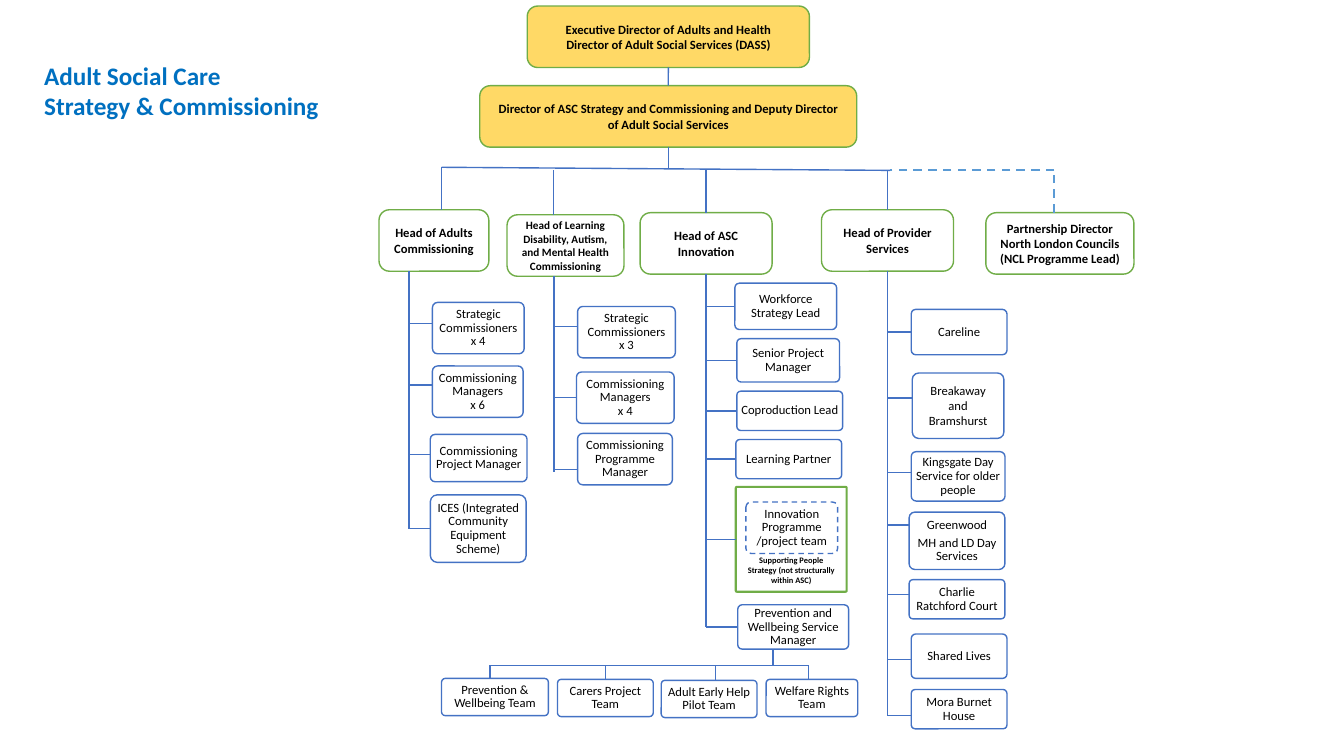
from dataclasses import dataclass

from lxml import etree
from pptx import Presentation
from pptx.dml.color import RGBColor
from pptx.enum.dml import MSO_LINE
from pptx.enum.shapes import MSO_CONNECTOR, MSO_SHAPE
from pptx.enum.text import MSO_ANCHOR, PP_ALIGN
from pptx.oxml.ns import qn
from pptx.util import Pt

ROUNDED = MSO_SHAPE.ROUNDED_RECTANGLE
STRAIGHT = MSO_CONNECTOR.STRAIGHT
DASH = MSO_LINE.DASH
MIDDLE, BOTTOM_ANCHOR = MSO_ANCHOR.MIDDLE, MSO_ANCHOR.BOTTOM
CENTER, LEFT_ALIGN = PP_ALIGN.CENTER, PP_ALIGN.LEFT
TOP, LEFT, BOTTOM = 0, 1, 2

FONT = "Calibri"
COLORS = {
    "gold": "FFD966", "green": "70AD47", "blue": "4472C4", "sky": "5B9BD5",
    "title": "0070C0", "white": "FFFFFF", "black": "000000",
}
SNAP = 2  # a line this near to the middle of a side is joined there
HEAD_HEIGHT = 43.9
BUS_LEFT, BUS_RIGHT = (315.4, 119.5), (635.8, 121.7)
TEAM_BUS_Y = 475.2


@dataclass
class BoxStyle:
    fill: str = "white"
    line: str = "blue"
    weight: float = 1
    dashed: bool = False
    corner: float = 0.1
    size: float = 9
    bold: bool = False
    spacing: float = 0.9
    gap: float = 3.15
    anchor: MSO_ANCHOR = MIDDLE
    insets: tuple = (2, 1)


HEAD = BoxStyle(line="green", corner=0.17, bold=True, spacing=1, gap=0, insets=(7.2, 3.6))
SMALL_HEAD = BoxStyle(line="green", corner=0.17, size=8, bold=True, spacing=1, insets=(7.2, 3.6))
DIRECTOR = BoxStyle(fill="gold", line="green", corner=0.17, bold=True, spacing=1, gap=0,
                    insets=(7.2, 3.6))
REPORT = BoxStyle()
LOOSE_REPORT = BoxStyle(spacing=1, gap=0)
PROJECT_TEAM = BoxStyle(dashed=True)
SUPPORTING = BoxStyle(line="green", weight=1.5, corner=0.01, size=6, bold=True, spacing=1,
                      anchor=BOTTOM_ANCHOR, insets=(7.2, 4.5))

# Each head: left, top, width, text, style, x of the line above, y where that line
# starts, x and end of the line below, and the reports.
# Each report: left, top, width, height, text, y of its line, style.
HEADS = [
    (270.7, 149.8, 78.5, "Head of Adults Commissioning", HEAD, 315.4, 119.5, 292.3, 377.6, [
        (308.9, 216, 65.5, 36.7, "Strategic Commissioners x 4", 231.1, REPORT),
        (308.9, 261.4, 64.8, 36.7, "Commissioning Managers\nx 6", 275, REPORT),
        (307.4, 310.3, 69.1, 33.8, "Commissioning Project Manager", 324.7, REPORT),
        (307.4, 353.5, 68.4, 48.2, "ICES (Integrated Community Equipment Scheme)", 378, REPORT),
    ]),
    (362.2, 153.4, 83.5, "Head of Learning Disability, Autism, and Mental Health Commissioning",
     SMALL_HEAD, 395.3, 121.7, 395.7, 337, [
        (412.6, 218.9, 69.8, 36.7, "Strategic Commissioners\nx 3", 233.3, REPORT),
        (411.8, 265.7, 69.8, 36.7, "Commissioning Managers\nx 4", 285.1, REPORT),
        (412.6, 309.6, 67.7, 36.7, "Commissioning Programme Manager", 335.5, REPORT),
    ]),
    (457.2, 151.9, 94.3, "Head of ASC Innovation", HEAD, 504.4, 121.7, 504.4, 447.8, [
        (524.9, 202.3, 72.7, 33.1, "Workforce Strategy Lead", 220.3, REPORT),
        (526.3, 241.9, 73.4, 31, "Senior Project Manager", 256.3, REPORT),
        (526.3, 279.4, 75.6, 28.1, "Coproduction Lead", 291.6, REPORT),
        (525.6, 313.9, 75.6, 28.1, "Learning Partner", 327.6, REPORT),
        (525.6, 347.8, 79.2, 74.9, "Supporting People Strategy (not structurally within ASC)",
         384.5, SUPPORTING),
        (527, 432, 79.2, 31.7, "Prevention and Wellbeing Service Manager", 447.1, REPORT),
    ]),
    (586.8, 149.8, 94.3, "Head of Provider Services", HEAD, 634, 121.7, 634, 511.2, [
        (650.9, 221, 68.4, 32.4, "Careline", 239, REPORT),
        (651.6, 266.4, 65.5, 46.8, ["Breakaway", "and", "Bramshurst"], 284.4, LOOSE_REPORT),
        (650.9, 322.6, 67, 35.3, "Kingsgate Day Service for older people", 337.7, REPORT),
        (649.4, 365.8, 68.4, 41, ["Greenwood", "MH and LD Day Services"], 375.1, REPORT),
        (649.4, 414, 68.4, 28.1, "Charlie Ratchford Court", 424.8, REPORT),
        (650.9, 452.9, 68.4, 31.7, "Shared Lives", 470.9, REPORT),
        (650.9, 492.5, 68.4, 28.1, "Mora Burnet House", 511.2, REPORT),
    ]),
]
# Each team: left, top, width, text, x of its line
TEAMS = [
    (315.4, 484.6, 76.3, "Prevention & Wellbeing Team", 349.9),
    (398.2, 485.3, 68.4, "Carers Project Team", 431.3),
    (472.3, 486, 68.4, "Adult Early Help Pilot Team", 511.2),
    (547.2, 485.3, 65.5, "Welfare Rights Team", 577.4),
]


def rgb(name):
    return RGBColor.from_string(COLORS[name])


def write(frame, text, size, color, bold, align, spacing=1, gap=0):
    """Fill a text frame; a list gives paragraphs, a newline gives a line break."""
    frame.word_wrap = True
    paragraphs = [text] if isinstance(text, str) else text
    for i, words in enumerate(paragraphs):
        paragraph = frame.add_paragraph() if i else frame.paragraphs[0]
        paragraph.alignment = align
        paragraph.line_spacing = spacing
        paragraph.space_before = Pt(gap if i else 0)
        for j, part in enumerate(words.split("\n")):
            if j:
                paragraph.add_line_break()
            run = paragraph.add_run()
            run.text = part
            run.font.name = FONT
            run.font.size = Pt(size)
            run.font.bold = bold
            run.font.color.rgb = rgb(color)


def add_box(slide, left, top, width, height, text, style):
    box = slide.shapes.add_shape(ROUNDED, Pt(left), Pt(top), Pt(width), Pt(height))
    box.shadow.inherit = False
    box.adjustments[0] = style.corner
    box.fill.solid()
    box.fill.fore_color.rgb = rgb(style.fill)
    box.line.color.rgb = rgb(style.line)
    box.line.width = Pt(style.weight)
    if style.dashed:
        box.line.dash_style = DASH
    frame = box.text_frame
    frame.vertical_anchor = style.anchor
    frame.margin_left = frame.margin_right = Pt(style.insets[0])
    frame.margin_top = frame.margin_bottom = Pt(style.insets[1])
    write(frame, text, style.size, "black", style.bold, CENTER, style.spacing, style.gap)
    return box


def add_line(slide, start, end, dashed=False):
    line = slide.shapes.add_connector(STRAIGHT, *(Pt(v) for v in (*start, *end)))
    line.line.color.rgb = rgb("sky" if dashed else "blue")
    line.line.width = Pt(1.5 if dashed else 1)
    if dashed:
        line.line.dash_style = DASH
    etree.SubElement(line._element.spPr, qn("a:effectLst"))
    return line


def add_branch(slide, box, side, at, reach, dashed=False):
    """Draw a line square to a side of the box, at one place along it, as far as reach."""
    if side == LEFT:
        middle = (box.top + box.height / 2) / Pt(1)
    else:
        middle = (box.left + box.width / 2) / Pt(1)
    joined = abs(at - middle) <= SNAP
    if joined:
        at = middle
    if side == LEFT:
        start, end = (box.left.pt, at), (reach, at)
    else:
        edge = box.top if side == TOP else box.top + box.height
        start, end = (at, edge / Pt(1)), (at, reach)
    line = add_line(slide, start, end, dashed)
    if joined:
        line.begin_connect(box, side)


def add_directors(slide):
    executive = add_box(slide, 376.6, 4.3, 201.6, HEAD_HEIGHT,
                        ["Executive Director of Adults and Health",
                         "Director of Adult Social Services (DASS)"], DIRECTOR)
    deputy = add_box(slide, 342.7, 61.2, 269.3, HEAD_HEIGHT,
                     "Director of ASC Strategy and Commissioning and Deputy Director "
                     "of Adult Social Services", DIRECTOR)
    link = add_line(slide, (477.4, 48.2), (477.4, 61.2))
    link.begin_connect(executive, BOTTOM)
    link.end_connect(deputy, TOP)
    add_branch(slide, deputy, BOTTOM, 478.8, 120.6)
    add_line(slide, BUS_LEFT, BUS_RIGHT)


def add_department(slide, left, top, width, text, style, drop_x, bus_y, trunk_x, trunk_end,
                   reports):
    """Draw a head with its reports and return the boxes of the reports."""
    head = add_box(slide, left, top, width, HEAD_HEIGHT, text, style)
    add_branch(slide, head, TOP, drop_x, bus_y)
    add_branch(slide, head, BOTTOM, trunk_x, trunk_end)
    boxes = []
    for *place, title, branch_y, report_style in reports:
        box = add_box(slide, *place, title, report_style)
        add_branch(slide, box, LEFT, branch_y, trunk_x)
        boxes.append(box)
    return boxes


def add_partnership(slide):
    partnership = add_box(slide, 704.2, 151.9, 105.8, HEAD_HEIGHT,
                          ["Partnership Director North London Councils",
                           "(NCL Programme Lead)"], HEAD)
    add_branch(slide, partnership, TOP, 753.1, 122.4, dashed=True)
    add_line(slide, (753.1, 121.7), BUS_RIGHT, dashed=True)


def add_teams(slide, manager):
    add_branch(slide, manager, BOTTOM, 552.2, TEAM_BUS_Y)
    add_line(slide, (TEAMS[0][-1], TEAM_BUS_Y), (TEAMS[-1][-1], TEAM_BUS_Y))
    for left, top, width, text, drop_x in TEAMS:
        team = add_box(slide, left, top, width, 26.6, text, REPORT)
        add_branch(slide, team, TOP, drop_x, TEAM_BUS_Y)


def main():
    prs = Presentation()
    prs.slide_width, prs.slide_height = Pt(960), Pt(540)
    slide = prs.slides.add_slide(prs.slide_layouts[6])
    title = slide.shapes.add_textbox(Pt(24.5), Pt(39.6), Pt(232.6), Pt(72.7))
    write(title.text_frame, ["Adult Social Care", "Strategy & Commissioning"],
          18, "title", True, LEFT_ALIGN)
    add_directors(slide)
    departments = [add_department(slide, *head) for head in HEADS]
    add_box(slide, 532.8, 358.6, 65.5, 36.7, "Innovation Programme /project team", PROJECT_TEAM)
    add_partnership(slide)
    prevention_manager = departments[2][-1]
    add_teams(slide, prevention_manager)
    prs.save("out.pptx")


if __name__ == "__main__":
    main()
